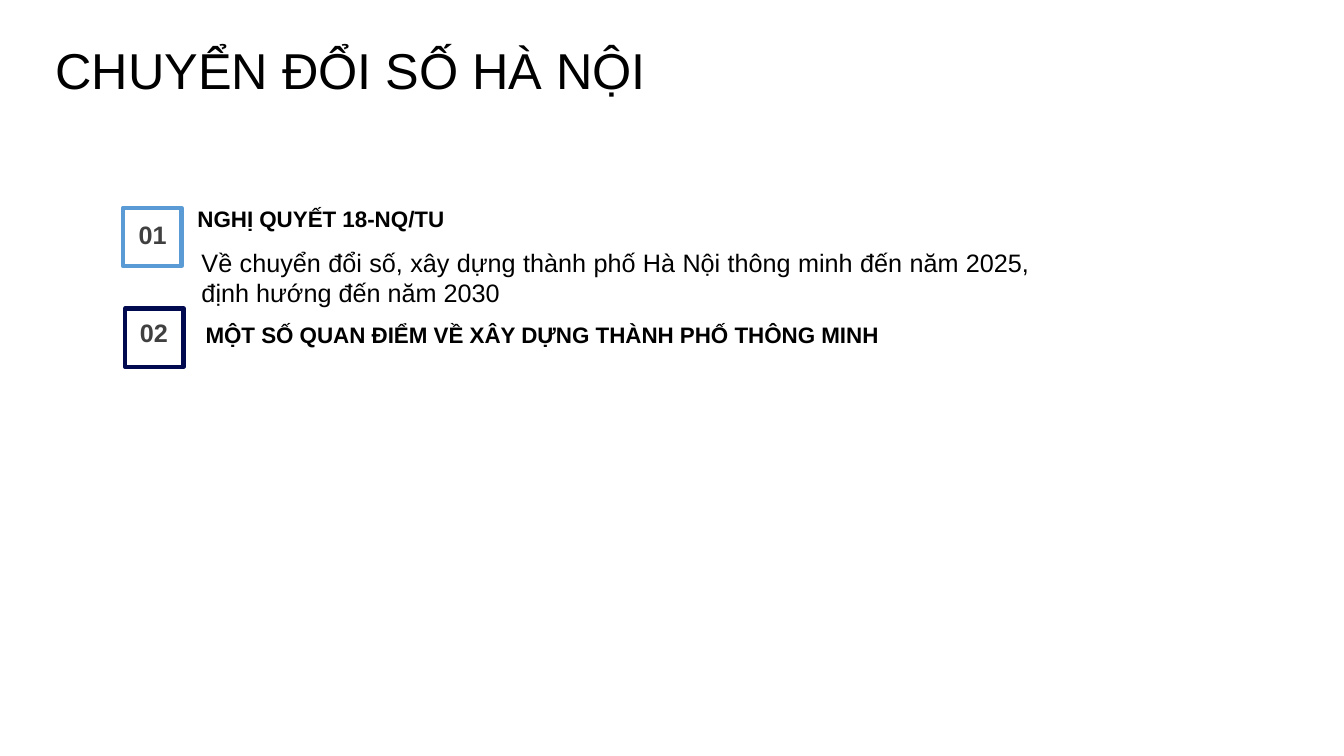
from dataclasses import dataclass

from pptx import Presentation
from pptx import util as u
from pptx.dml.color import RGBColor
from pptx.enum import shapes, text
from pptx.slide import Slide

BLACK = RGBColor(0x00, 0x00, 0x00)
WHITE = RGBColor(0xFF, 0xFF, 0xFF)
GREY = RGBColor(0x40, 0x40, 0x40)
BLUE = RGBColor(0x5A, 0x9B, 0xD5)
NAVY = RGBColor(0x01, 0x0A, 0x4F)

FONT = "Arial"
SQUARE_SIDE = 0.58
NUMBER_SIZE = (0.51, 0.4)


@dataclass(frozen=True)
class AgendaItem:
    number: str
    colour: RGBColor
    square_at: tuple[float, float]
    number_at: tuple[float, float]
    heading: str
    heading_at: tuple[float, float]
    heading_width: float


AGENDA = (
    AgendaItem("01", BLUE, (1.22, 2.06), (1.26, 2.13),
               "NGHỊ QUYẾT 18-NQ/TU", (1.86, 1.99), 7.13),
    AgendaItem("02", NAVY, (1.24, 3.06), (1.27, 3.1),
               "MỘT SỐ QUAN ĐIỂM VỀ XÂY DỰNG THÀNH PHỐ THÔNG MINH", (1.94, 3.14), 7.25),
)


def add_text(page: Slide, words: str, *, at: tuple[float, float],
             size: tuple[float, float], points: int, bold: bool = False,
             colour: RGBColor = BLACK,
             align: text.PP_ALIGN = text.PP_ALIGN.LEFT) -> None:
    box = page.shapes.add_textbox(*map(u.Inches, at + size))
    frame = box.text_frame
    frame.word_wrap = True
    frame.auto_size = text.MSO_AUTO_SIZE.SHAPE_TO_FIT_TEXT
    para = frame.paragraphs[0]
    para.alignment = align
    span = para.add_run()
    span.text = words
    span.font.name = FONT
    span.font.size = u.Pt(points)
    span.font.bold = bold
    span.font.color.rgb = colour


def add_square(page: Slide, at: tuple[float, float], colour: RGBColor) -> None:
    side = u.Inches(SQUARE_SIDE)
    square = page.shapes.add_shape(
        shapes.MSO_SHAPE.RECTANGLE, *map(u.Inches, at), side, side)
    square.shadow.inherit = False
    square.fill.solid()
    square.fill.fore_color.rgb = WHITE
    square.line.color.rgb = colour
    square.line.width = u.Pt(3)


def add_agenda_item(page: Slide, item: AgendaItem) -> None:
    add_text(page, item.heading, at=item.heading_at,
             size=(item.heading_width, 0.37), points=16, bold=True)
    add_square(page, item.square_at, item.colour)
    add_text(page, item.number, at=item.number_at, size=NUMBER_SIZE, points=18,
             bold=True, colour=GREY, align=text.PP_ALIGN.CENTER)


def main() -> None:
    deck = Presentation()
    deck.slide_width = u.Inches(13.33)
    deck.slide_height = u.Inches(7.5)
    page = deck.slides.add_slide(deck.slide_layouts[6])

    add_text(page, "CHUYỂN ĐỔI SỐ HÀ NỘI", at=(0.45, 0.34), size=(6.85, 0.71), points=36)
    add_text(page, "Về chuyển đổi số, xây dựng thành phố Hà Nội thông minh "
                   "đến năm 2025, định hướng đến năm 2030",
             at=(1.9, 2.4), size=(8.41, 0.71), points=18, align=text.PP_ALIGN.JUSTIFY)
    for item in AGENDA:
        add_agenda_item(page, item)

    deck.save("out.pptx")


if __name__ == "__main__":
    main()
